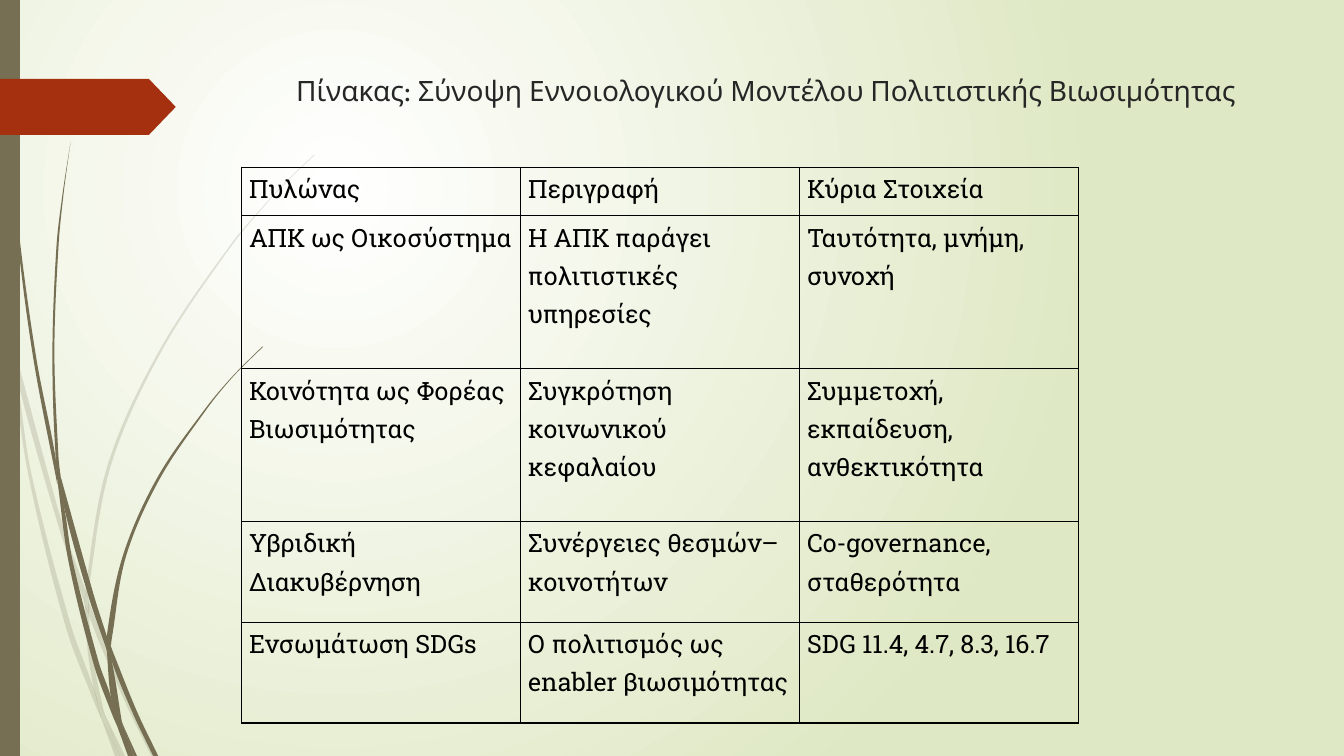
import math

from lxml import etree
from pptx import Presentation
from pptx import util as u
from pptx.dml import color
from pptx.enum import shapes, text
from pptx.oxml import ns

OLIVE = color.RGBColor(0x76, 0x6F, 0x54)
RUST = color.RGBColor(0xA5, 0x30, 0x10)
WHITE = color.RGBColor(0xFF, 0xFF, 0xFF)
LIGHT_GREEN = color.RGBColor(0xDF, 0xE8, 0xC4)
CHARCOAL = color.RGBColor(0x26, 0x26, 0x26)
BLACK = color.RGBColor(0, 0, 0)

PALE_OPACITY = 20
BLADE_UNIT = 2.54  # centimetres per unit of the blade points

# Each piece of grass: its left edge and its right edge, from the top down
PALE_GRASS = [
    ([(0, 2.99), (0.1, 3.44), (0.11, 3.5)], [(0, 2.82), (0.09, 3.22), (0.11, 3.5)]),
    ([(0.14, 3.45), (0.17, 3.76), (0.58, 5.22), (0.84, 5.99)],
     [(0.14, 3.45), (0.62, 5.2), (0.85, 5.86)]),
    ([(0.88, 5.96), (0.88, 6.1), (1.23, 6.94), (1.5, 7.5)],
     [(0.88, 5.96), (0.92, 6.07), (1.27, 6.92), (1.55, 7.5)]),
    ([(1.05, 7.11), (1.19, 7.5)], [(1.05, 7.11), (1.24, 7.5)]),
    ([(0.11, 3.5), (0.28, 4.7), (0.65, 6.21), (0.92, 6.93), (1.01, 7.14)],
     [(0.11, 3.5), (0.17, 3.76), (0.31, 4.69), (0.7, 6.19), (0.93, 6.83), (1.01, 7.14)]),
    ([(0.84, 5.99), (0.87, 6.46), (0.93, 6.83), (0.96, 6.92), (1.05, 7.11)],
     [(0.84, 5.99), (0.88, 6.1), (0.91, 6.46), (1.03, 7.06), (1.05, 7.11)]),
    ([(3.12, 1.53), (2.89, 1.75), (2.68, 1.97), (2.28, 2.44), (1.58, 3.48),
      (1.07, 4.61), (0.85, 5.84), (0.88, 5.96)],
     [(3.12, 1.54), (2.9, 1.75), (2.68, 1.98), (2.29, 2.45), (1.6, 3.49),
      (1.1, 4.62), (0.88, 5.84), (0.88, 5.96)]),
    ([(1.01, 7.14), (1.14, 7.5)], [(1.01, 7.14), (1.19, 7.5)]),
    ([(0.85, 5.86), (0.84, 5.99), (0.88, 6.1)], [(0.85, 5.86), (0.88, 5.96), (0.88, 6.1)]),
    ([(0.93, 6.83), (0.99, 7.07), (1.01, 7.14), (1.19, 7.5)],
     [(0.93, 6.83), (0.96, 6.92), (1.05, 7.11), (1.19, 7.5)]),
]
DARK_GRASS = [
    ([(0.03, 0), (0.04, 0.48), (0.07, 1.1), (0.17, 2.33), (0.33, 3.55), (0.57, 4.81)],
     [(0.04, 0), (0.05, 0.48), (0.08, 1.09), (0.19, 2.32), (0.36, 3.55),
      (0.55, 4.53), (0.57, 4.81)]),
    ([(0.6, 4.72), (0.64, 5.05), (0.88, 5.92), (1.06, 6.45)],
     [(0.6, 4.72), (0.93, 5.9), (1.06, 6.31)]),
    ([(1.1, 6.41), (1.11, 6.56), (1.32, 7.08), (1.52, 7.5)],
     [(1.1, 6.41), (1.13, 6.49), (1.36, 7.06), (1.57, 7.5)]),
    ([(0.57, 4.77), (0.68, 5.57), (0.93, 6.59), (1.11, 7.08), (1.17, 7.22)],
     [(0.57, 4.77), (0.64, 5.05), (0.72, 5.56), (0.98, 6.57), (1.1, 6.91), (1.17, 7.22)]),
    ([(0.7, 1.41), (0.62, 1.93), (0.56, 2.45), (0.52, 3.49), (0.55, 4.49), (0.6, 4.72)],
     [(0.7, 1.41), (0.63, 1.93), (0.58, 2.45), (0.54, 3.49), (0.58, 4.53), (0.6, 4.72)]),
    ([(1.22, 7.19), (1.33, 7.5)], [(1.22, 7.19), (1.36, 7.5)]),
    ([(0.55, 4.49), (0.57, 4.77), (0.64, 5.05)], [(0.55, 4.49), (0.6, 4.72), (0.64, 5.05)]),
    ([(2.6, 3.44), (2.31, 3.73), (2.04, 4.05), (1.56, 4.74), (1.22, 5.51),
      (1.06, 6.31), (1.1, 6.41)],
     [(2.61, 3.44), (2.31, 3.74), (2.05, 4.06), (1.58, 4.76), (1.25, 5.52),
      (1.11, 6.33), (1.1, 6.41)]),
    ([(1.17, 7.22), (1.27, 7.5)], [(1.17, 7.22), (1.31, 7.5)]),
    ([(1.06, 6.45), (1.1, 6.91), (1.16, 7.06), (1.22, 7.19)],
     [(1.06, 6.45), (1.11, 6.56), (1.21, 7.16), (1.22, 7.19)]),
    ([(1.06, 6.31), (1.06, 6.45), (1.11, 6.56)], [(1.06, 6.31), (1.1, 6.41), (1.11, 6.56)]),
    ([(1.1, 6.91), (1.17, 7.22), (1.3, 7.5)], [(1.1, 6.91), (1.22, 7.19), (1.33, 7.5)]),
]

TITLE = "Πίνακας: Σύνοψη Εννοιολογικού Μοντέλου Πολιτιστικής Βιωσιμότητας"
PILLARS = [
    ("Πυλώνας", "Περιγραφή", "Κύρια Στοιχεία"),
    ("ΑΠΚ ως Οικοσύστημα", "Η ΑΠΚ παράγει πολιτιστικές υπηρεσίες",
     "Ταυτότητα, μνήμη, συνοχή"),
    ("Κοινότητα ως Φορέας Βιωσιμότητας", "Συγκρότηση κοινωνικού κεφαλαίου",
     "Συμμετοχή, εκπαίδευση, ανθεκτικότητα"),
    ("Υβριδική Διακυβέρνηση", "Συνέργειες θεσμών–κοινοτήτων", "Co-governance, σταθερότητα"),
    ("Ενσωμάτωση SDGs", "Ο πολιτισμός ως enabler βιωσιμότητας", "SDG 11.4, 4.7, 8.3, 16.7"),
]
ROW_HEIGHTS = [1.22, 3.85, 3.85, 2.54, 2.54]
COLUMN_WIDTH = 7.03


def set_background(slide):
    fill = slide.background.fill
    fill.gradient()
    for stop, rgb in zip(fill.gradient_stops, (WHITE, LIGHT_GREEN)):
        stop.color.rgb = rgb
    # Radial gradient centred in the upper left quarter
    linear = slide._element.find(".//" + ns.qn("a:lin"))
    radial = etree.Element(ns.qn("a:path"), path="circle")
    etree.SubElement(radial, ns.qn("a:fillToRect"), l="50000", t="50000", r="100000", b="100000")
    linear.getparent().replace(linear, radial)


def paint(shape, rgb, opacity=100):
    shape.shadow.inherit = False
    shape.fill.solid()
    shape.fill.fore_color.rgb = rgb
    shape.line.fill.background()
    if opacity < 100:
        rgb_element = shape._element.spPr.find(".//" + ns.qn("a:srgbClr"))
        etree.SubElement(rgb_element, ns.qn("a:alpha"), val=str(opacity * 1000))


def curve_points(edge):
    """Two control points and an end point for each span of a smooth edge."""
    padded = [edge[0], *edge, edge[-1]]
    slopes = [[(b - a) / (math.dist(before, here) + math.dist(here, after))
               for a, b in zip(before, after)]
              for before, here, after in zip(padded, padded[1:], padded[2:])]
    points = []
    for start, end, leave, arrive in zip(edge, edge[1:], slopes, slopes[1:]):
        third = math.dist(start, end) / 3
        points += [tuple(p + third * s for p, s in zip(start, leave)),
                   tuple(p - third * s for p, s in zip(end, arrive)), end]
    return points


def add_grass(slide, left_edge, right_edge, opacity=100):
    points = [left_edge[0]] + curve_points(left_edge)
    if left_edge[-1] != right_edge[-1]:
        points += [left_edge[-1], right_edge[-1], right_edge[-1]]
    points += curve_points(right_edge[::-1])
    outline = [(u.Cm(x * BLADE_UNIT), u.Cm(y * BLADE_UNIT)) for x, y in points]
    builder = slide.shapes.build_freeform(*outline[0])
    builder.add_line_segments(outline[1:], close=True)
    shape = builder.convert_to_shape()
    # Turn every three straight steps into one curve
    steps = shape._element.findall(".//" + ns.qn("a:lnTo"))
    for first in range(0, len(outline) - 1, 3):
        curve = etree.Element(ns.qn("a:cubicBezTo"))
        steps[first].addprevious(curve)
        for step in steps[first:first + 3]:
            curve.append(step[0])
            step.getparent().remove(step)
    paint(shape, OLIVE, opacity)


def add_block(slide, kind, top, width, height, rgb):
    shape = slide.shapes.add_shape(kind, 0, u.Cm(top), u.Cm(width), u.Cm(height))
    paint(shape, rgb)
    return shape


def set_font(paragraph, name, size, rgb):
    paragraph.font.name = name
    paragraph.font.size = u.Pt(size)
    paragraph.font.color.rgb = rgb


def format_title(slide):
    title = slide.shapes.title
    title.left, title.top = u.Cm(7.21), u.Cm(1.73)
    title.width, title.height = u.Cm(24.77), u.Cm(3.56)
    frame = title.text_frame
    frame.text = TITLE
    frame.word_wrap = True
    frame.auto_size = text.MSO_AUTO_SIZE.NONE
    frame.vertical_anchor = text.MSO_ANCHOR.TOP
    frame.paragraphs[0].alignment = text.PP_ALIGN.LEFT
    set_font(frame.paragraphs[0], "League Spartan", 20, CHARCOAL)


def format_cell(cell, words):
    cell.text = words
    cell.margin_left = cell.margin_right = u.Cm(0.19)
    cell.margin_top = cell.margin_bottom = 0
    for side in "LRTB":
        line = etree.SubElement(cell._tc.get_or_add_tcPr(), ns.qn("a:ln" + side), w=str(u.Pt(1)))
        fill = etree.SubElement(line, ns.qn("a:solidFill"))
        etree.SubElement(fill, ns.qn("a:srgbClr"), val=str(BLACK))
    cell.fill.background()
    paragraph = cell.text_frame.paragraphs[0]
    paragraph.line_spacing = 1.15
    paragraph.space_after = u.Pt(10)
    set_font(paragraph, "Roboto Slab", 18, BLACK)


def add_pillar_table(slide):
    columns = len(PILLARS[0])
    table = slide.shapes.add_table(
        len(PILLARS), columns, u.Cm(6.09), u.Cm(4.22),
        u.Cm(COLUMN_WIDTH * columns), u.Cm(sum(ROW_HEIGHTS))).table
    table.first_row = table.horz_banding = False
    for column in table.columns:
        column.width = u.Cm(COLUMN_WIDTH)
    for row, height, entries in zip(table.rows, ROW_HEIGHTS, PILLARS):
        row.height = u.Cm(height)
        for cell, words in zip(row.cells, entries):
            format_cell(cell, words)


def main():
    presentation = Presentation()
    presentation.slide_width, presentation.slide_height = u.Cm(33.87), u.Cm(19.05)
    slide = presentation.slides.add_slide(presentation.slide_layouts[5])
    set_background(slide)
    # Grass, side bar and arrow tag
    for grass, opacity in ((PALE_GRASS, PALE_OPACITY), (DARK_GRASS, 100)):
        for left_edge, right_edge in grass:
            add_grass(slide, left_edge, right_edge, opacity)
    add_block(slide, shapes.MSO_SHAPE.RECTANGLE, 0, 0.5, 19.05, OLIVE)
    tag = add_block(slide, shapes.MSO_SHAPE.PENTAGON, 1.99, 4.43, 1.41, RUST)
    tag.adjustments[0] = 0.48
    # Title and table
    format_title(slide)
    add_pillar_table(slide)
    presentation.save("out.pptx")


if __name__ == "__main__":
    main()
